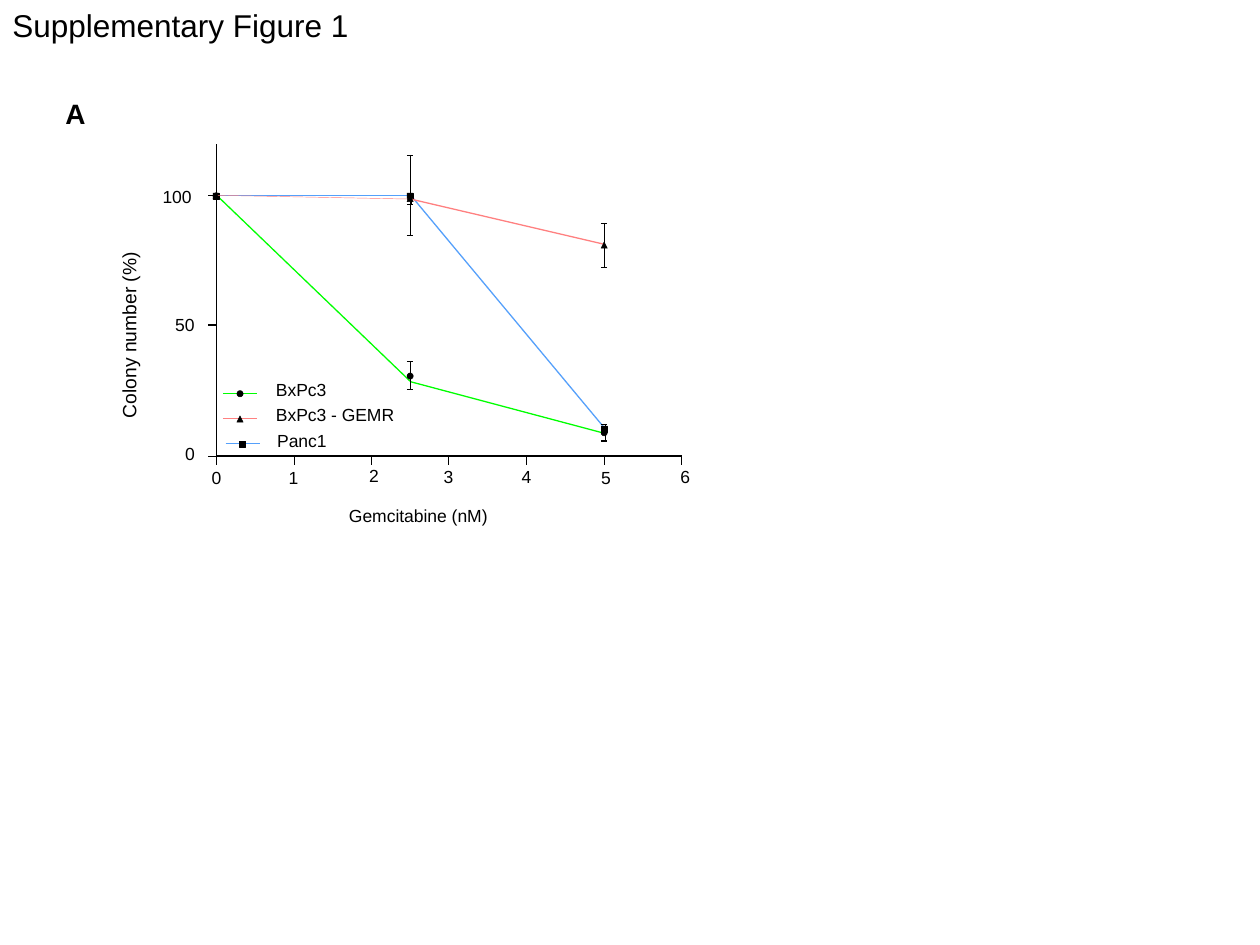
from dataclasses import dataclass

from lxml.etree import SubElement
from pptx import Presentation
from pptx.dml.color import RGBColor
from pptx.enum.shapes import MSO_CONNECTOR as Connector, MSO_SHAPE as Shape
from pptx.enum.text import MSO_AUTO_SIZE as AutoSize
from pptx.oxml.ns import qn
from pptx.util import Pt

EMU_PER_PX = 9144  # 100 px to the inch
COLORS = {"ink": "000000", "green": "00FF00", "blue": "55A0FB", "pink": "FF8080"}
THIN, THICK = 0.25, 0.75
MARKER = 5
ORIGIN_X, ORIGIN_Y = 172, 362
AXIS_RIGHT, AXIS_TOP = 541, 114
DOSE_STEP = (AXIS_RIGHT - ORIGIN_X) / 6
TICK = 7


@dataclass(frozen=True)
class Label:
    text: str
    x: int
    y: int
    width: int
    height: int = 17
    size: int = 10
    rotation: int = 0
    wrap: bool = False


@dataclass(frozen=True)
class ErrorBar:
    dose: float
    top: int
    bottom: int
    stem: float
    top_cap: float = THIN
    bottom_cap: float = THIN


@dataclass(frozen=True)
class Series:
    color: str
    marker: Shape
    line_ys: tuple[int, int, int]
    marker_tops: tuple[int, int, int]
    first_width: float
    bars: tuple[ErrorBar, ...]
    legend: Label
    legend_x: int


DOSES = (0, 2.5, 5)
CELL_LINES = (
    Series("green", Shape.OVAL, (155, 303, 344), (153, 296, 341), THICK,
           (ErrorBar(2.5, 287, 309, THICK),
            ErrorBar(5, 337, 350, THIN, top_cap=0, bottom_cap=THICK)),
           Label("BxPc3", 219, 301, 41), 177),
    Series("blue", Shape.RECTANGLE, (155, 155, 340), (153, 153, 338), THIN,
           (ErrorBar(2.5, 123, 187, THICK), ErrorBar(5, 337, 344, THIN)),
           Label("Panc1", 220, 341, 41), 179),
    Series("pink", Shape.ISOSCELES_TRIANGLE, (155, 158, 194), (153, 155, 192), THIN,
           (ErrorBar(2.5, 153, 162, THIN), ErrorBar(5, 177, 212, THICK)),
           Label("BxPc3 - GEMR", 219, 321, 96), 177),
)
DOSE_LABELS = ((168, 371), (229, 371), (293, 369), (352, 370),
               (414, 370), (477, 371), (540, 370))
PERCENT_TICKS = (
    (ORIGIN_Y, THIN, Label("0", 147, 352, 8)),
    (258, THICK, Label("50", 139, 249, 17)),
    (155, THICK, Label("100", 129, 148, 25)),
)
AXIS_TITLES = (
    Label("Gemcitabine (nM)", 277, 401, 186, 30, wrap=True),
    Label("Colony number (%)", 36, 256, 133, 19, size=11, rotation=270),
)


def px(length: float) -> int:
    return round(length * EMU_PER_PX)


def color(name: str) -> RGBColor:
    return RGBColor.from_string(COLORS[name])


def dose_x(dose: float) -> int:
    return ORIGIN_X + round(dose * DOSE_STEP)


def add_line(shapes, x1: int, y1: int, x2: int, y2: int,
             width: float, ink: str = "ink") -> None:
    line = shapes.add_connector(Connector.STRAIGHT, px(x1), px(y1), px(x2), px(y2))
    line.line.color.rgb = color(ink)
    line.line.width = Pt(width)
    SubElement(line._element.spPr, qn("a:effectLst"))


def add_marker(shapes, kind: Shape, x: int, y: int) -> None:
    marker = shapes.add_shape(kind, px(x), px(y), px(MARKER), px(MARKER))
    marker.shadow.inherit = False
    marker.fill.solid()
    marker.fill.fore_color.rgb = color("ink")
    marker.line.color.rgb = color("ink")
    marker.line.width = Pt(THIN)


def add_text(shapes, label: Label, bold: bool = False):
    box = shapes.add_textbox(px(label.x), px(label.y), px(label.width), px(label.height))
    box.rotation = label.rotation
    box.text_frame.word_wrap = label.wrap
    run = box.text_frame.paragraphs[0].add_run()
    run.text = label.text
    run.font.name = "Arial"
    run.font.size = Pt(label.size)
    run.font.bold = bold
    run.font.color.rgb = color("ink")
    return box.text_frame


def add_plot_label(shapes, label: Label) -> None:
    """Add a label whose box hugs its text."""
    frame = add_text(shapes, label)
    frame.auto_size = AutoSize.SHAPE_TO_FIT_TEXT
    frame.margin_left = frame.margin_right = 0
    frame.margin_top = frame.margin_bottom = 0


def add_axes(shapes) -> None:
    add_line(shapes, ORIGIN_X, ORIGIN_Y, AXIS_RIGHT, ORIGIN_Y, THICK)
    for dose, (label_x, label_y) in enumerate(DOSE_LABELS):
        x = dose_x(dose)
        width = THIN if dose in (0, 6) else THICK
        add_line(shapes, x, ORIGIN_Y, x, ORIGIN_Y + TICK, width)
        add_plot_label(shapes, Label(str(dose), label_x, label_y, 8))
    add_line(shapes, ORIGIN_X, ORIGIN_Y, ORIGIN_X, AXIS_TOP, THICK)
    for y, width, label in PERCENT_TICKS:
        add_line(shapes, ORIGIN_X, y, ORIGIN_X - TICK, y, width)
        add_plot_label(shapes, label)


def add_error_bar(shapes, bar: ErrorBar) -> None:
    x = dose_x(bar.dose)
    add_line(shapes, x, bar.top, x, bar.bottom, bar.stem)
    for y, width in ((bar.top, bar.top_cap), (bar.bottom, bar.bottom_cap)):
        if width:
            add_line(shapes, x - 3, y, x + 2, y, width)


def add_series(shapes, series: Series) -> None:
    xs = [dose_x(dose) for dose in DOSES]
    ys = series.line_ys
    for i, width in enumerate((series.first_width, THICK)):
        add_line(shapes, xs[i], ys[i], xs[i + 1], ys[i + 1], width, series.color)
    for bar in series.bars:
        add_error_bar(shapes, bar)
    for x, top in zip(xs, series.marker_tops):
        add_marker(shapes, series.marker, x - 3, top)


def add_legend_entry(shapes, series: Series) -> None:
    x, y = series.legend_x, series.legend.y + 11
    add_plot_label(shapes, series.legend)
    add_line(shapes, x, y, x + 27, y, THIN, series.color)
    add_marker(shapes, series.marker, x + 11, y - 2)


def main() -> None:
    deck = Presentation()
    deck.slide_width, deck.slide_height = px(1000), px(750)
    slide = deck.slides.add_slide(deck.slide_layouts[6])

    panel = add_text(slide.shapes, Label("A", 42, 75, 34, 36, 16, wrap=True), bold=True)
    panel.paragraphs[0].line_spacing = 0.9
    panel.paragraphs[0].space_before = Pt(7.5)
    heading = add_text(slide.shapes, Label("Supplementary Figure 1", 0, 0, 289, 40, 18))
    heading.auto_size = AutoSize.SHAPE_TO_FIT_TEXT

    plot = slide.shapes.add_group_shape().shapes
    add_axes(plot)
    for series in CELL_LINES:
        add_series(plot, series)
    for series in CELL_LINES:
        add_legend_entry(plot, series)
    for title in AXIS_TITLES:
        add_plot_label(plot, title)
    deck.save("out.pptx")


if __name__ == "__main__":
    main()
